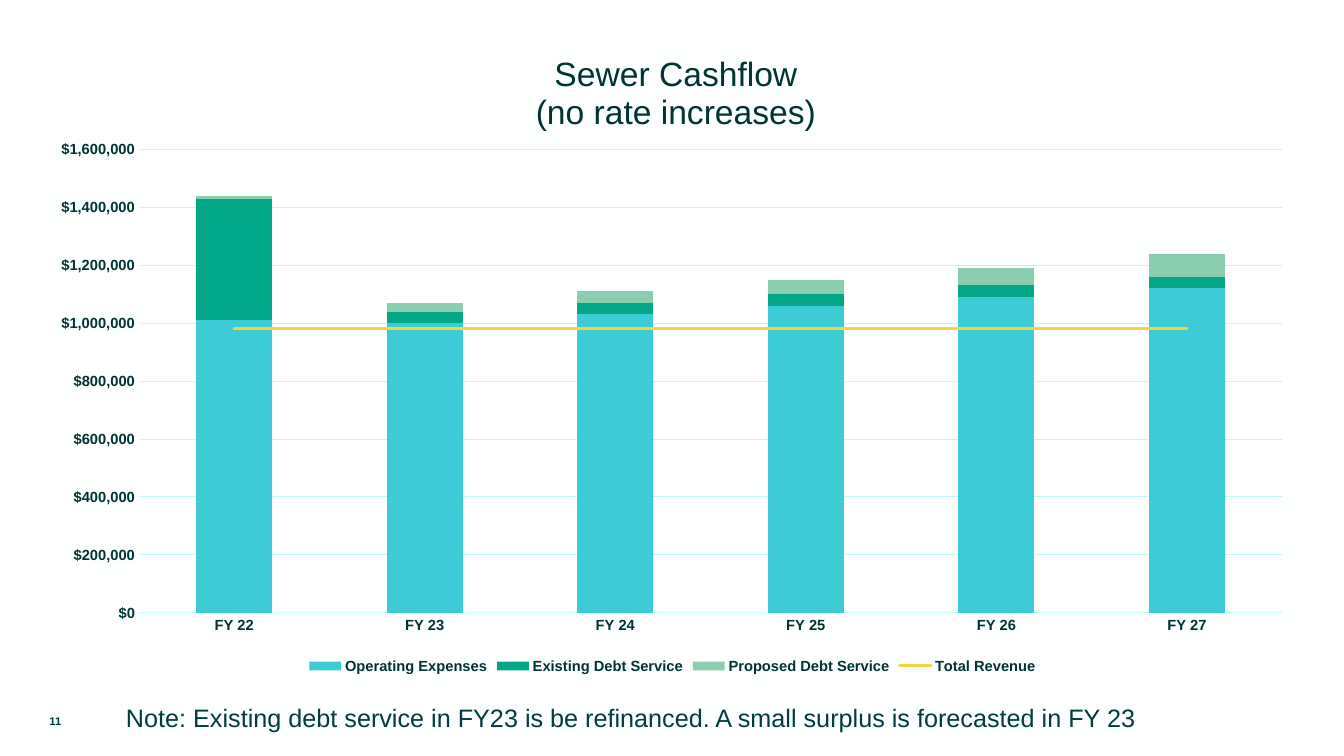
import pptx
import pptx.util
import pptx.chart.data
import pptx.dml.color
import pptx.enum.chart
import pptx.enum.text
import pptx.oxml
import pptx.oxml.ns

Inches = pptx.util.Inches
Pt = pptx.util.Pt
INK, DARK, GRID = "023B40", "003333", "BEF8FD"


def color(hex_code):
    return pptx.dml.color.RGBColor.from_string(hex_code)


def style(font, size, hex_code, bold=False):
    font.name = "Arial"
    font.size = Pt(size)
    font.bold = bold
    font.color.rgb = color(hex_code)


deck = pptx.Presentation()
deck.slide_width, deck.slide_height = Inches(13.33), Inches(7.5)
slide = deck.slides.add_slide(deck.slide_layouts[6])
slide.background.fill.solid()
slide.background.fill.fore_color.rgb = color("FEFFFF")

page = slide.shapes.add_textbox(Inches(0), Inches(6.95), Inches(1.1), Inches(0.4)).text_frame
page.word_wrap = True
page.vertical_anchor = pptx.enum.text.MSO_ANCHOR.MIDDLE
page.text = "11"
page.paragraphs[0].alignment = pptx.enum.text.PP_ALIGN.CENTER
style(page.paragraphs[0].runs[0].font, 8, INK, True)

cashflow = [
    ("Operating Expenses", "3DCCD5", [1010000, 1000000, 1030000, 1060000, 1090000, 1120000]),
    ("Existing Debt Service", "02A787", [420000] + [40000] * 5),
    ("Proposed Debt Service", "8ACEAF", [10000, 30000, 40000, 50000, 60000, 80000]),
    ("Total Revenue", "F7D342", [980000] * 6),
]
cashflow_data = pptx.chart.data.CategoryChartData(number_format='"$"#,##0')
cashflow_data.categories = [f"FY {year}" for year in range(22, 28)]
for name, _, amounts in cashflow:
    cashflow_data.add_series(name, amounts)
chart = slide.shapes.add_chart(
    pptx.enum.chart.XL_CHART_TYPE.COLUMN_STACKED,
    Inches(0.37), Inches(0.25), Inches(12.6), Inches(6.48), cashflow_data).chart
style(chart.font, 10, INK)

bars = chart.plots[0]
bars.gap_width, bars.overlap, bars.vary_by_categories = 150, 100, False
for series, (_, fill, _) in zip(bars.series, cashflow):
    series.format.fill.solid()
    series.format.fill.fore_color.rgb = color(fill)

bar_chart = chart._chartSpace.chart.plotArea.find(pptx.oxml.ns.qn("c:barChart"))
revenue_chart = pptx.oxml.parse_xml(
    f'<c:lineChart {pptx.oxml.ns.nsdecls("c")}><c:grouping val="standard"/>'
    '<c:varyColors val="0"/><c:marker val="1"/></c:lineChart>')
revenue = bar_chart.findall(pptx.oxml.ns.qn("c:ser"))[-1]
for bar_only in revenue.findall(pptx.oxml.ns.qn("c:invertIfNegative")):
    revenue.remove(bar_only)
revenue_chart.insert(2, revenue)
for axis_id in bar_chart.findall(pptx.oxml.ns.qn("c:axId")):
    revenue_chart.append(pptx.oxml.parse_xml(
        f'<c:axId {pptx.oxml.ns.nsdecls("c")} val="{axis_id.get("val")}"/>'))
bar_chart.addnext(revenue_chart)
revenue_line = chart.plots[1].series[0]
revenue_line.format.fill.background()
revenue_line.format.line.color.rgb = color(cashflow[-1][1])
revenue_line.format.line.width = Pt(2.25)
revenue_line.format.line._ln.set("cap", "rnd")
revenue_line.marker.style = pptx.enum.chart.XL_MARKER_STYLE.NONE
revenue_line.smooth = False

years, dollars = chart.category_axis, chart.value_axis
for axis in (years, dollars):
    axis.major_tick_mark = axis.minor_tick_mark = pptx.enum.chart.XL_TICK_MARK.NONE
    style(axis.tick_labels.font, 10.5, DARK, True)
dollars.minimum_scale, dollars.maximum_scale, dollars.major_unit = 0, 1600000, 200000
dollars.tick_labels.number_format = '"$"#,##0'
dollars.tick_labels.number_format_is_linked = False
dollars.format.line.fill.background()
for rule in (years.format.line, dollars.major_gridlines.format.line):
    rule.color.rgb = color(GRID)
    rule.width = Pt(0.75)

chart.has_legend = True
chart.legend.position = pptx.enum.chart.XL_LEGEND_POSITION.BOTTOM
chart.legend.include_in_layout = False
style(chart.legend.font, 10.5, DARK, True)

chart.has_title = True
heading = chart.chart_title
heading.text_frame.text = "Sewer Cashflow\n(no rate increases)"
for paragraph in heading.text_frame.paragraphs:
    style(paragraph.runs[0].font, 24, DARK)

plot_area = chart._chartSpace.chart.plotArea
for parent, position, target, shares in (
        (heading._element, 1, "", {"x": 0.39, "y": 0.04}),
        (plot_area, 0, '<c:layoutTarget val="inner"/>',
         {"x": 0.08, "y": 0.19, "w": 0.9, "h": 0.71})):
    for automatic in parent.findall(pptx.oxml.ns.qn("c:layout")):
        parent.remove(automatic)
    modes = "".join(f'<c:{side}Mode val="edge"/>' for side in "xy")
    sizes = "".join(f'<c:{side} val="{share}"/>' for side, share in shares.items())
    parent.insert(position, pptx.oxml.parse_xml(
        f'<c:layout {pptx.oxml.ns.nsdecls("c")}><c:manualLayout>{target}{modes}{sizes}'
        '</c:manualLayout></c:layout>'))

note = slide.shapes.add_textbox(Inches(1.25), Inches(6.84), Inches(11), Inches(0.43)).text_frame
note.word_wrap = True
note.auto_size = pptx.enum.text.MSO_AUTO_SIZE.SHAPE_TO_FIT_TEXT
note.margin_left, note.margin_right = Inches(0), Inches(0.24)
note.margin_top = note.margin_bottom = Inches(0.04)
note.text = "Note: Existing debt service in FY23 is be refinanced. A small surplus is forecasted in FY 23"
note.paragraphs[0].line_spacing = 1.3
note.paragraphs[0].space_before = Pt(10)
style(note.paragraphs[0].runs[0].font, 18, INK)

deck.save("out.pptx")
